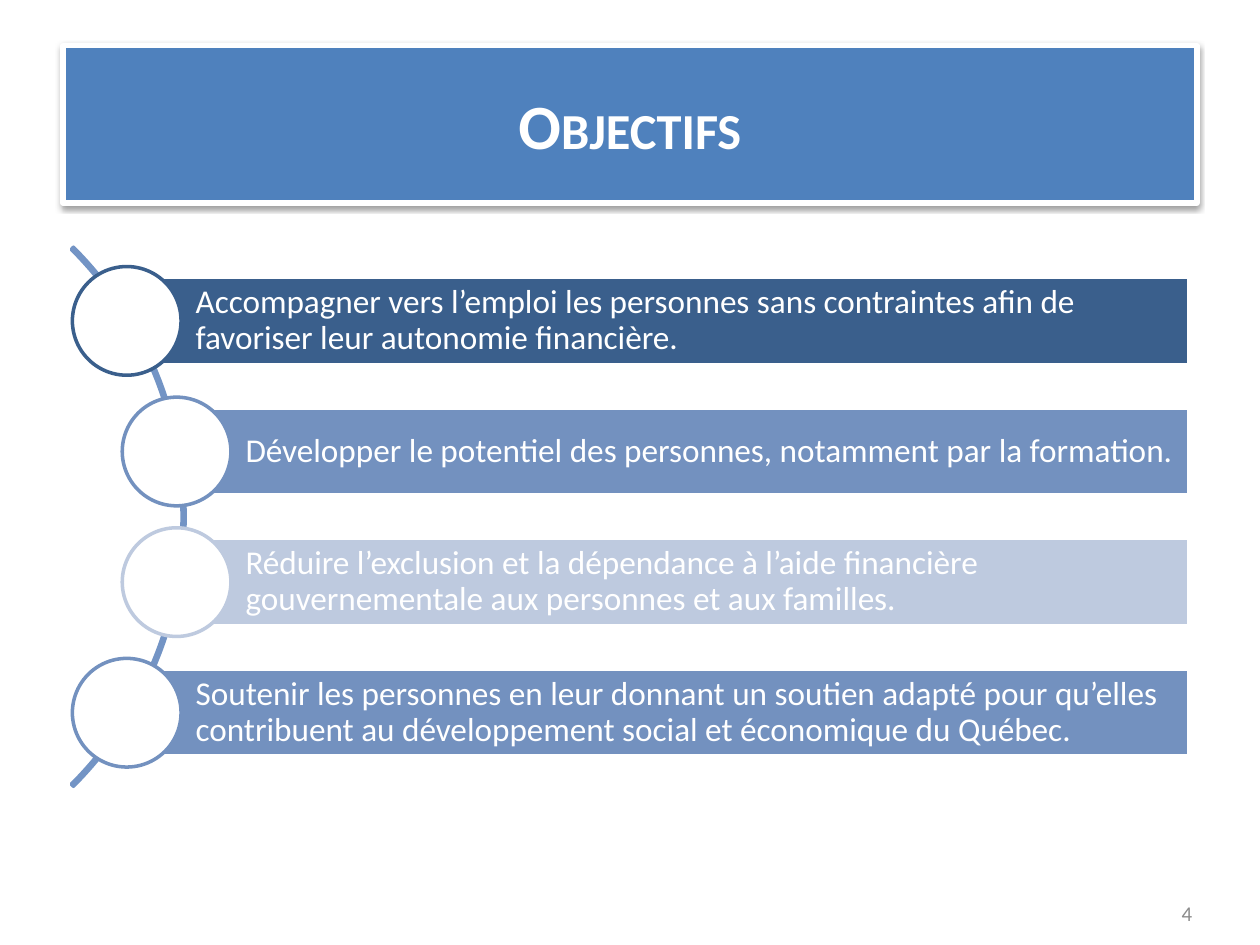
import pptx
import pptx.dml.color
import pptx.enum.shapes
import pptx.enum.text
import pptx.oxml
import pptx.util

Pt = pptx.util.Pt
SHAPES = pptx.enum.shapes.MSO_SHAPE
ALIGN = pptx.enum.text.PP_ALIGN

COLOURS = {
    "white": "FFFFFF",
    "title": "4F81BD",
    "arc": "7394C5",
    "dark": "3A5F8C",
    "medium": "7391BF",
    "light": "BECADF",
    "number": "8C8C8C",
}

BAR_RIGHT, BAR_TOP, BAR_HEIGHT, BAR_PITCH = 679.4, 158.5, 49.7, 74.64
CIRCLE_SIZE = 62.1
ARC_SIZE = 435.6
OUTER_LEFT, INNER_LEFT = 72.4, 100.9

OBJECTIVES = [
    (OUTER_LEFT, "dark", "Accompagner vers l’emploi les personnes sans contraintes "
     "afin de favoriser leur autonomie financière."),
    (INNER_LEFT, "medium", "Développer le potentiel des personnes, notamment par la formation."),
    (INNER_LEFT, "light", "Réduire l’exclusion et la dépendance à l’aide financière "
     "gouvernementale aux personnes et aux familles."),
    (OUTER_LEFT, "medium", "Soutenir les personnes en leur donnant un soutien adapté "
     "pour qu’elles contribuent au développement social et économique du Québec."),
]


def rgb(name):
    return pptx.dml.color.RGBColor.from_string(COLOURS[name])


def add_shape(slide, kind, left, top, width, height, fill, line, line_width=2):
    shape = slide.shapes.add_shape(kind, Pt(left), Pt(top), Pt(width), Pt(height))
    shape.shadow.inherit = False
    if fill:
        shape.fill.solid()
        shape.fill.fore_color.rgb = rgb(fill)
    else:
        shape.fill.background()
    shape.line.color.rgb = rgb(line)
    shape.line.width = Pt(line_width)
    return shape


def write_text(shape, text, size, colour, align, bold=False):
    """Fill a shape with one vertically centred paragraph and return it."""
    frame = shape.text_frame
    frame.word_wrap = True
    frame.vertical_anchor = pptx.enum.text.MSO_ANCHOR.MIDDLE
    paragraph = frame.paragraphs[0]
    paragraph.text = text
    paragraph.alignment = align
    paragraph.font.name = "Calibri"
    paragraph.font.size = Pt(size)
    paragraph.font.bold = bold
    paragraph.font.color.rgb = rgb(colour)
    return paragraph


def add_drop_shadow(shape):
    effects = shape._element.spPr.find(pptx.oxml.ns.qn("a:effectLst"))
    effects.append(pptx.oxml.parse_xml(
        f'<a:outerShdw {pptx.oxml.ns.nsdecls("a")} blurRad="{Pt(3.1)}" dist="{Pt(1.6)}" '
        'dir="5400000" rotWithShape="0"><a:srgbClr val="000000">'
        '<a:alpha val="38000"/></a:srgbClr></a:outerShdw>'))


def add_title(slide, text):
    title = add_shape(slide, SHAPES.RECTANGLE, 36, 26, 648, 90, "title", "white", 3)
    add_drop_shadow(title)
    paragraph = write_text(title, text, 36, "white", ALIGN.CENTER, bold=True)
    paragraph.runs[0]._r.get_or_add_rPr().set("cap", "small")


def add_page_number(slide, text):
    box = slide.shapes.add_textbox(Pt(520.6), Pt(507.6), Pt(167.8), Pt(28.8))
    write_text(box, text, 12, "number", ALIGN.RIGHT)


def add_arc(slide):
    middle = BAR_TOP + (BAR_HEIGHT + (len(OBJECTIVES) - 1) * BAR_PITCH) / 2
    arc = add_shape(slide, SHAPES.BLOCK_ARC, -329.8, middle - ARC_SIZE / 2,
                    ARC_SIZE, ARC_SIZE, None, "arc")
    for index, value in enumerate((189, 27, 0.004)):
        arc.adjustments[index] = value


def add_objective(slide, left, top, colour, text):
    """Add a text bar with a circle centred on its left edge."""
    bar = add_shape(slide, SHAPES.RECTANGLE, left, top, BAR_RIGHT - left, BAR_HEIGHT,
                    colour, "white")
    frame = bar.text_frame
    frame.margin_left = Pt(39.4)
    frame.margin_right = frame.margin_top = frame.margin_bottom = Pt(3.6)
    paragraph = write_text(bar, text, 19, "white", ALIGN.LEFT)
    paragraph.line_spacing = 0.9
    add_shape(slide, SHAPES.OVAL, left - CIRCLE_SIZE / 2,
              top + (BAR_HEIGHT - CIRCLE_SIZE) / 2, CIRCLE_SIZE, CIRCLE_SIZE,
              "white", colour)


def main():
    presentation = pptx.Presentation()
    presentation.slide_width = Pt(720)
    presentation.slide_height = Pt(540)
    slide = presentation.slides.add_slide(presentation.slide_layouts[6])
    add_title(slide, "Objectifs")
    add_page_number(slide, "4")
    add_arc(slide)
    for index, (left, colour, text) in enumerate(OBJECTIVES):
        add_objective(slide, left, BAR_TOP + index * BAR_PITCH, colour, text)
    presentation.save("out.pptx")


if __name__ == "__main__":
    main()
